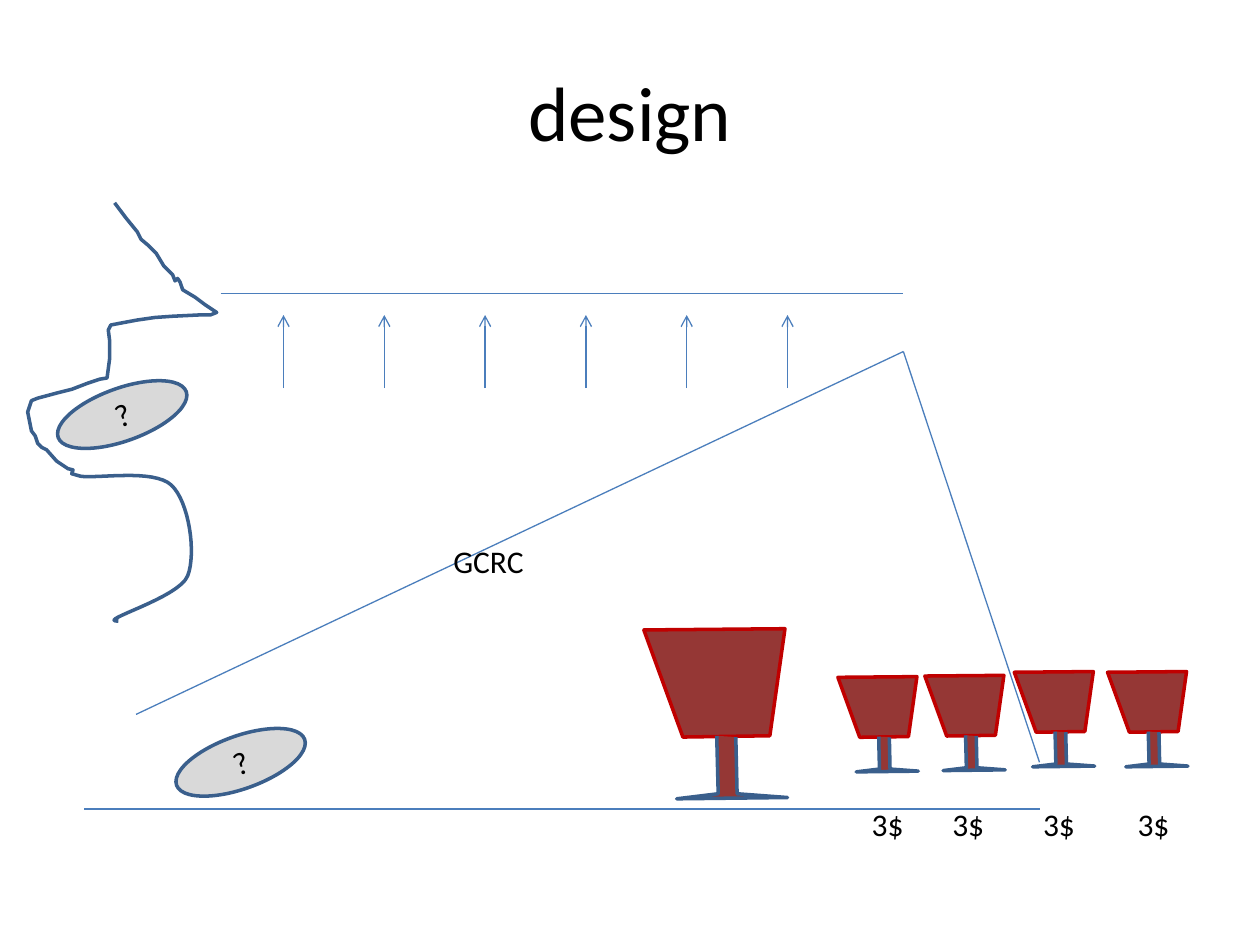
from lxml import etree
from pptx import Presentation
from pptx.dml.color import RGBColor
from pptx.enum.shapes import MSO_CONNECTOR, MSO_SHAPE
from pptx.enum.text import MSO_ANCHOR, PP_ALIGN
from pptx.oxml.ns import qn
from pptx.util import Inches, Pt

BLUE, OUTLINE, GRAY = "4B7EBC", "3A5F8C", "D9D9D9"
WINE, RIM, BLACK = "953735", "C00000", "000000"


def paint(shape, line, width, fill=None):
    shape.line.color.rgb = RGBColor.from_string(line)
    shape.line.width = Pt(width)
    if hasattr(shape, "fill"):
        shape.shadow.inherit = False
        if fill:
            shape.fill.solid()
            shape.fill.fore_color.rgb = RGBColor.from_string(fill)
        else:
            shape.fill.background()
    else:
        etree.SubElement(shape.line._get_or_add_ln().getparent(), qn("a:effectLst"))


def write(shape, text, size=18, align=PP_ALIGN.LEFT, anchor=MSO_ANCHOR.TOP):
    frame = shape.text_frame
    frame.word_wrap = True
    frame.vertical_anchor = anchor
    paragraph = frame.paragraphs[0]
    paragraph.text = text
    paragraph.alignment = align
    font_format = {"name": "Calibri", "size": Pt(size)}
    for name, value in font_format.items():
        setattr(paragraph.font, name, value)
    paragraph.font.color.rgb = RGBColor.from_string(BLACK)
    return paragraph


presentation = Presentation()
presentation.slide_width = Inches(10)
presentation.slide_height = Inches(7.5)
slide = presentation.slides.add_slide(presentation.slide_layouts[5])
shapes = slide.shapes

title = shapes.title
title_box = {"left": 0.5, "top": 0.25, "width": 9, "height": 1.25}
for name, value in title_box.items():
    setattr(title, name, Inches(value))
write(title, "design", 44, PP_ALIGN.CENTER, MSO_ANCHOR.MIDDLE)

profile = [
    (0.91, 1.61), (1, 1.73), (1.09, 1.84), (1.12, 1.9), (1.18, 1.95), (1.24, 2.01),
    (1.3, 2.11), (1.37, 2.18), (1.39, 2.23), (1.41, 2.21), (1.43, 2.24), (1.45, 2.3),
    (1.55, 2.36), (1.63, 2.42), (1.72, 2.48), (1.67, 2.5), (1.58, 2.5), (1.37, 2.51),
    (1.23, 2.52), (1.09, 2.54), (0.93, 2.57), (0.88, 2.58), (0.86, 2.62), (0.87, 2.7),
    (0.87, 2.85), (0.85, 3), (0.79, 3.01), (0.7, 3.04), (0.57, 3.09), (0.45, 3.12),
    (0.3, 3.16), (0.25, 3.18), (0.22, 3.27), (0.25, 3.42), (0.28, 3.46), (0.3, 3.52),
    (0.33, 3.55), (0.37, 3.57), (0.45, 3.66), (0.54, 3.72), (0.58, 3.73), (0.57, 3.76),
    (0.64, 3.78),
]
bends = [
    ((0.77, 3.8), (1.22, 3.72), (1.36, 3.85)),
    ((1.5, 3.98), (1.56, 4.39), (1.49, 4.57)),
    ((1.42, 4.75), (0.75, 4.93), (0.94, 4.93)),
]
for bend in bends:
    controls = list(zip(profile[-1], *bend))
    for step in range(1, 17):
        t = step / 16
        weights = ((1 - t) ** 3, 3 * t * (1 - t) ** 2, 3 * t * t * (1 - t), t ** 3)
        profile.append(tuple(sum(w * c for w, c in zip(weights, axis)) for axis in controls))

lines = [(1.75, 2.33, 7.17, 2.33, False)]
lines += [(2.25 + 0.8 * i, 3.08, 2.25 + 0.8 * i, 2.5, True) for i in range(6)]
lines += [
    (0.67, 6.42, 8.25, 6.42, False),
    (7.17, 2.79, 1.08, 5.67, False),
    (7.17, 2.79, 8.25, 6.05, False),
]
for *ends, has_arrow in lines:
    connector = shapes.add_connector(MSO_CONNECTOR.STRAIGHT, *map(Inches, ends))
    paint(connector, BLUE, 0.75)
    if has_arrow:
        etree.SubElement(connector.line._get_or_add_ln(), qn("a:tailEnd"), type="arrow")

outlines = [(shapes, profile, False, OUTLINE, None)]
cup = [(0, 0.01), (0.31, 0.86), (1, 0.85), (1.12, 0)]
stem = [(0.58, 0.85), (0.58, 0.91), (0.59, 1.31), (0.26, 1.35),
        (1.14, 1.34), (0.74, 1.31), (0.73, 0.86)]
goblets = [(5.11, 4.99, 1), (6.65, 5.37, 0.56), (7.34, 5.36, 0.56),
           (8.05, 5.33, 0.56), (8.79, 5.33, 0.56)]
for left, top, scale in goblets:
    group = shapes.add_group_shape()
    for part, closed, color in ((cup, True, RIM), (stem, False, OUTLINE)):
        points = [(left + scale * x, top + scale * y) for x, y in part]
        outlines.append((group.shapes, points, closed, color, WINE))

for parent, points, closed, color, fill in outlines:
    points = [(Inches(x), Inches(y)) for x, y in points]
    builder = parent.build_freeform(*points[0])
    builder.add_line_segments(points[1:], close=closed)
    paint(builder.convert_to_shape(), color, 2, fill)

for left, top in ((0.43, 3.08), (1.37, 5.84)):
    ellipse = shapes.add_shape(
        MSO_SHAPE.OVAL, Inches(left), Inches(top), Inches(1.08), Inches(0.42))
    ellipse.rotation = 340.3
    paint(ellipse, OUTLINE, 2, GRAY)
    write(ellipse, "?", align=PP_ALIGN.CENTER, anchor=MSO_ANCHOR.MIDDLE)

label = shapes.add_textbox(Inches(3.5), Inches(4.25), Inches(2.17), Inches(0.4))
write(label, "GCRC")

prices = shapes.add_textbox(Inches(6.65), Inches(6.34), Inches(3.27), Inches(0.4))
paragraph = write(prices, "\t3$" * 4)
tab_list = etree.Element(qn("a:tabLst"))
paragraph._p.get_or_add_pPr().insert(0, tab_list)
for position in (0.17, 0.81, 1.53, 2.28):
    etree.SubElement(tab_list, qn("a:tab"), pos=str(Inches(position)), algn="l")

presentation.save("out.pptx")
